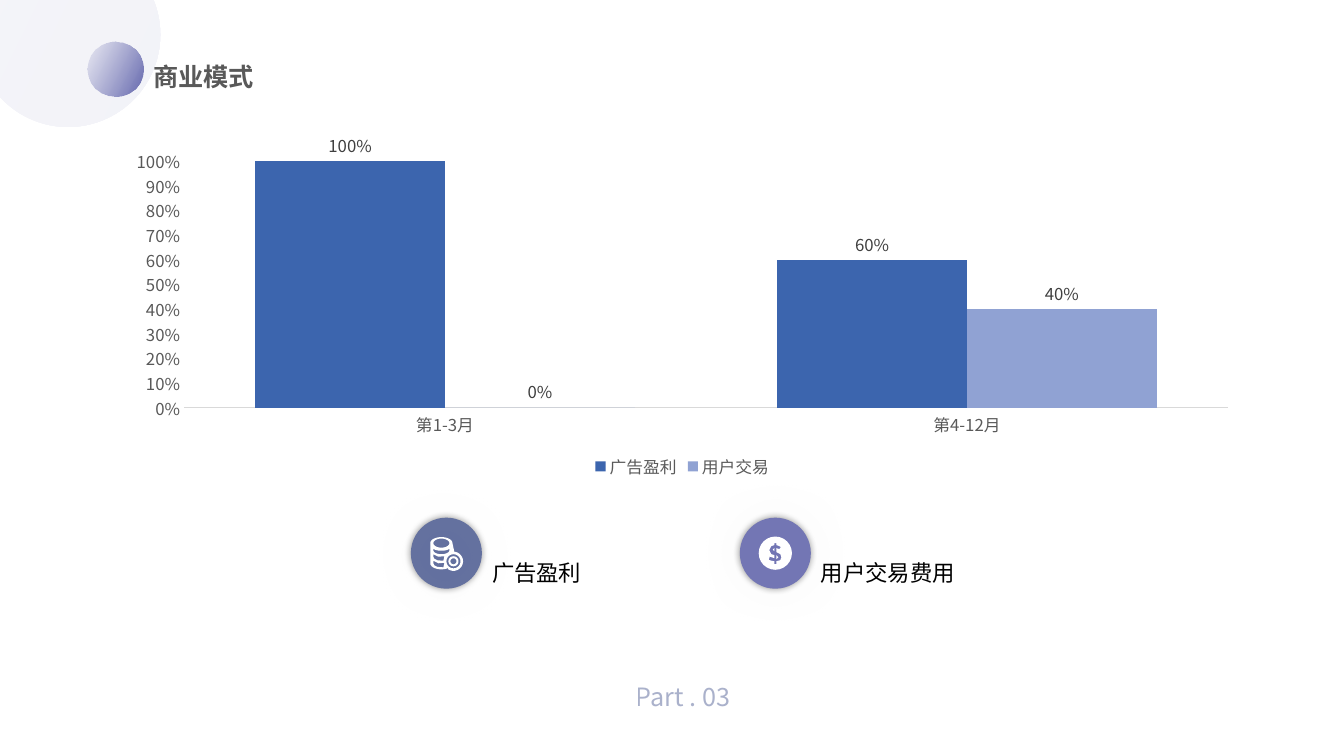
import math

import pptx
import pptx.chart.data
import pptx.dml.color
import pptx.enum.chart
import pptx.enum.shapes
import pptx.enum.text
import pptx.oxml
import pptx.oxml.ns
import pptx.util
from pptx.util import Cm

FONT = "Noto Sans CJK SC"
GREY = "595959"
ICON_UNIT = 0.0254  # centimetres per icon grid step


def color(value):
    return pptx.dml.color.RGBColor.from_string(value)


def xml(tag, parent, **attributes):
    element = pptx.oxml.ns.qn(tag)
    child = parent.makeelement(element, {k: str(v) for k, v in attributes.items()})
    parent.append(child)
    return child


def set_alpha(fill_element, percents):
    """Give each RGB colour below the element its opacity."""
    for rgb, percent in zip(fill_element.iter(pptx.oxml.ns.qn("a:srgbClr")), percents):
        xml("a:alpha", rgb, val=percent * 1000)


def style_font(font, size, value, bold=False):
    font.name = FONT
    font.size = pptx.util.Pt(size)
    font.bold = bold
    font.color.rgb = color(value)
    xml("a:ea", font._element, typeface=FONT)


def add_shadow(shape, opacity, blur):
    effects = shape._element.spPr.find(pptx.oxml.ns.qn("a:effectLst"))
    shadow = xml("a:outerShdw", effects, blurRad=pptx.util.Pt(blur), dist=0, dir=0,
                 algn="ctr", rotWithShape=0)
    xml("a:srgbClr", shadow, val="000000")
    set_alpha(shadow, [opacity])


def finish(shape, fill):
    shape.shadow.inherit = False
    shape.line.fill.background()
    shape.fill.solid()
    shape.fill.fore_color.rgb = color(fill)


def add_circle(shapes, left, top, diameter, fill):
    circle = shapes.add_shape(pptx.enum.shapes.MSO_SHAPE.OVAL, Cm(left), Cm(top),
                              Cm(diameter), Cm(diameter))
    finish(circle, fill)
    return circle


def add_gradient_circle(slide, left, top, diameter, opacities):
    circle = add_circle(slide.shapes, left, top, diameter, "7578B7")
    circle.fill.gradient()
    circle.fill.gradient_angle = 334
    for stop, value in zip(circle.fill.gradient_stops, ("7578B7", "6366AD")):
        stop.color.rgb = color(value)
    set_alpha(circle._element.spPr, opacities)


def add_text(slide, left, top, width, height, text, size, value, bold=False,
             spacing=None, justify=False, middle=False):
    box = slide.shapes.add_textbox(Cm(left), Cm(top), Cm(width), Cm(height))
    frame = box.text_frame
    frame.word_wrap = True
    if middle:
        frame.vertical_anchor = pptx.enum.text.MSO_ANCHOR.MIDDLE
    else:
        frame.auto_size = pptx.enum.text.MSO_AUTO_SIZE.SHAPE_TO_FIT_TEXT
    paragraph = frame.paragraphs[0]
    paragraph.line_spacing = spacing
    if justify:
        paragraph.alignment = pptx.enum.text.PP_ALIGN.JUSTIFY
    run = paragraph.add_run()
    run.text = text
    style_font(run.font, size, value, bold)
    return run


def arc(x, y, radius_x, radius_y, start=0, end=360):
    """Points on an ellipse, with angles clockwise in degrees."""
    angles = [math.radians(start + (end - start) * i / 24) for i in range(25)]
    return [(x + radius_x * math.cos(a), y + radius_y * math.sin(a)) for a in angles]


def coin_contours():
    outline = (arc(-5, -10, 11, 6, 180, 360) + arc(7, 8, 9.5, 9.5, -85, 125)
               + arc(-5, 10, 11, 6, 50, 180))
    gaps = [arc(-5, -10, 8, 4.5),
            arc(-5, -5, 8, 2.5, 180, 0) + arc(-5, -3, 8, 4, 0, 180)]
    gaps += [[(-13, y), (-8, y + 2.5), (-2, y + 2), (-3, y + 6.5), (-9, y + 6),
              (-12, y + 4.5), (-13, y + 2.5)] for y in (1, 7.5)]
    return [outline] + gaps + [arc(7, 8, r, r) for r in (7, 5, 3)]


def dollar_contours():
    sign = [(-1, -10), (-1, -8), (-4, -7), (-6, -3), (-4, 1), (-1, 2), (-1, 5),
            (-4, 4), (-5.5, 3.5), (-6.5, 6.5), (-4, 7.5), (-1, 8), (-1, 11),
            (1, 11), (1, 8), (5, 7), (6, 4), (5, 1), (1, -1), (1, -5), (4, -4),
            (5.5, -6), (4, -7), (1, -8), (1, -10)]
    counters = [[(1, 2), (3, 4), (1, 6)], [(-1, -5), (-1, -2), (-2.5, -3.5)]]
    return [arc(0, 0, 16.5, 16.5), sign] + counters


def add_icon(slide, center_x, center_y, fill, contours):
    """A coloured disc with a white pictogram."""
    shapes = slide.shapes.add_group_shape().shapes
    diameter = 1.79
    disc = add_circle(shapes, center_x - diameter / 2, center_y - diameter / 2,
                      diameter, fill)
    add_shadow(disc, 40, 5)
    builder = None
    for contour in contours:
        points = [(Cm(center_x + x * ICON_UNIT), Cm(center_y + y * ICON_UNIT))
                  for x, y in contour]
        if builder is None:
            builder = shapes.build_freeform(*points[0])
        else:
            builder.move_to(*points[0])
        builder.add_line_segments(points[1:], close=True)
    pictogram = builder.convert_to_shape()
    finish(pictogram, "FFFFFF")
    add_shadow(pictogram, 20, 53)


def add_revenue_chart(slide):
    data = pptx.chart.data.CategoryChartData(number_format="0%")
    data.categories = ["第1-3月", "第4-12月"]
    data.add_series("广告盈利", (1, 0.6))
    data.add_series("用户交易", (0, 0.4))
    chart = slide.shapes.add_chart(
        pptx.enum.chart.XL_CHART_TYPE.COLUMN_CLUSTERED,
        Cm(2.87), Cm(3.35), Cm(28.65), Cm(8.81), data).chart
    style_font(chart.font, 10, "000000")
    chart.has_title = False
    chart.has_legend = True
    chart.legend.position = pptx.enum.chart.XL_LEGEND_POSITION.BOTTOM
    chart.legend.include_in_layout = False
    style_font(chart.legend.font, 12, GREY)

    # Axes
    for axis in (chart.category_axis, chart.value_axis):
        axis.major_tick_mark = pptx.enum.chart.XL_TICK_MARK.NONE
        axis.has_major_gridlines = False
        style_font(axis.tick_labels.font, 12, GREY)
    chart.category_axis.format.line.color.rgb = color("D9D9D9")
    chart.category_axis.format.line.width = pptx.util.Pt(0.75)
    value_axis = chart.value_axis
    value_axis.format.line.fill.background()
    value_axis.minimum_scale = 0
    value_axis.maximum_scale = 1
    value_axis.major_unit = 0.1
    value_axis.tick_labels.number_format = "0%"
    value_axis.tick_labels.number_format_is_linked = False

    # Columns and their labels
    plot = chart.plots[0]
    plot.gap_width = 75
    plot.overlap = 0
    plot.vary_by_categories = False
    for series, value in zip(plot.series, ("3C65AE", "90A2D3")):
        series.format.fill.solid()
        series.format.fill.fore_color.rgb = color(value)
        series.invert_if_negative = False
        labels = series.data_labels
        labels.show_value = True
        labels.number_format = "0%"
        labels.number_format_is_linked = False
        labels.position = pptx.enum.chart.XL_LABEL_POSITION.OUTSIDE_END
        style_font(labels.font, 12, "404040")


def main():
    presentation = pptx.Presentation()
    presentation.slide_width = Cm(33.87)
    presentation.slide_height = Cm(19.05)
    slide = presentation.slides.add_slide(presentation.slide_layouts[6])

    # Heading and section mark
    add_gradient_circle(slide, -0.61, -1.45, 4.65, (8, 8))
    add_gradient_circle(slide, 2.21, 1.04, 1.4, (8, 100))
    add_text(slide, 3.61, 1.42, 6.99, 1.02, "商业模式", 18, GREY, bold=True, justify=True)
    part = add_text(slide, 15.77, 16.89, 3.76, 1.3, "Part . 03", 18, "6572A1",
                    justify=True, middle=True)
    set_alpha(part.font._element, [54])

    add_revenue_chart(slide)

    # Sources of income
    for center_x, fill, contours, label in (
            (11.25, "6572A1", coin_contours(), "广告盈利"),
            (19.54, "7578B7", dollar_contours(), "用户交易费用")):
        add_icon(slide, center_x, 13.94, fill, contours)
        add_text(slide, center_x + 0.9, 13.82, 4.19, 1.02, label, 16, "000000", spacing=1.2)

    presentation.save("out.pptx")


if __name__ == "__main__":
    main()
